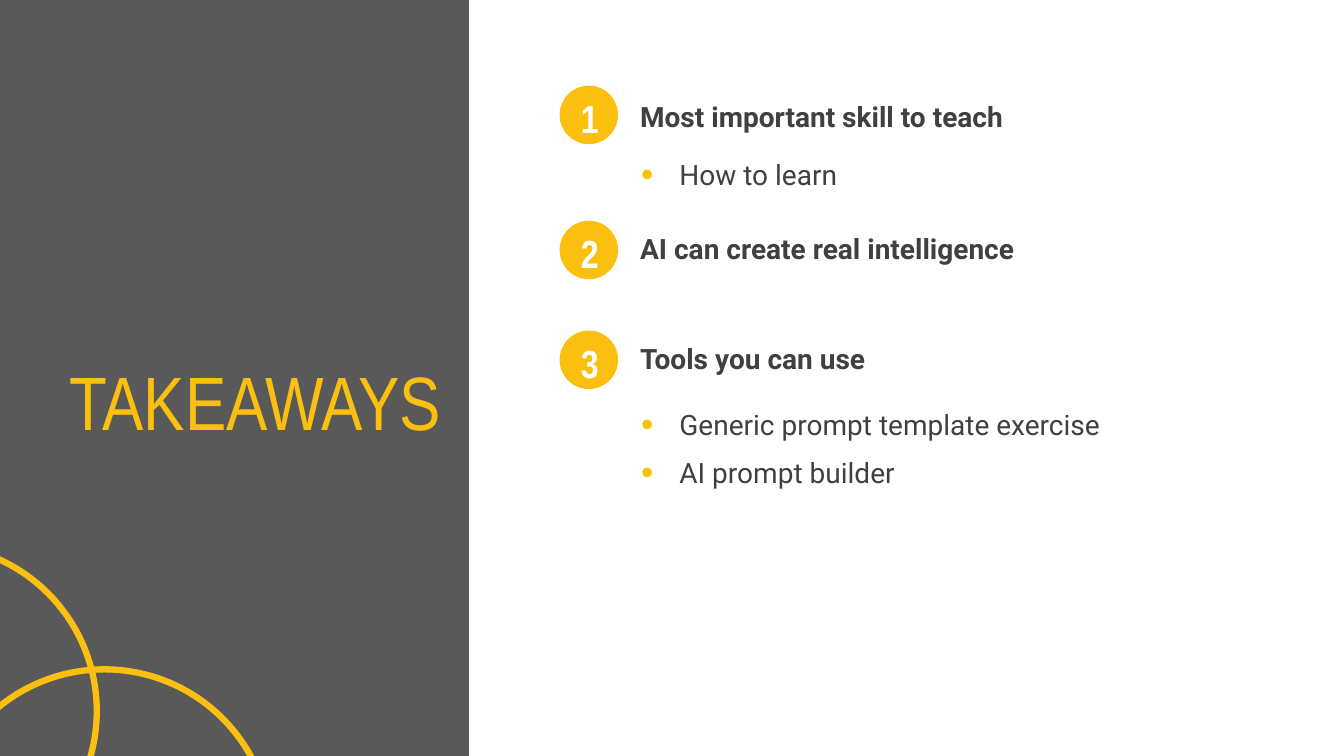
from dataclasses import dataclass

from lxml.etree import SubElement
from pptx import Presentation
from pptx.dml.color import RGBColor
from pptx.enum.shapes import MSO_SHAPE
from pptx.enum.text import MSO_AUTO_SIZE, PP_ALIGN
from pptx.oxml.ns import qn
from pptx.shapes.autoshape import Shape
from pptx.slide import Slide
from pptx.util import Inches, Pt


@dataclass(frozen=True)
class Theme:
    panel: RGBColor = RGBColor(0x59, 0x59, 0x59)
    gold: RGBColor = RGBColor(0xFB, 0xBF, 0x10)
    bullet: RGBColor = RGBColor(0xFF, 0xC0, 0x00)
    body: RGBColor = RGBColor(0x40, 0x40, 0x40)
    white: RGBColor = RGBColor(0xFF, 0xFF, 0xFF)
    display_font: str = "Arial Narrow"
    body_font: str = "Roboto"
    title_size: int = 54
    number_size: int = 28
    body_size: int = 20
    ring_width: float = 4.5


@dataclass(frozen=True)
class Point:
    text: str
    top: float


@dataclass(frozen=True)
class Takeaway:
    heading: Point
    badge_top: float
    details: tuple[Point, ...] = ()


@dataclass(frozen=True)
class Ring:
    left: float
    top: float


THEME = Theme()
BADGE_LEFT, BADGE_SIZE = 5.55, 0.58
HEADING_LEFT, DETAIL_LEFT = 6.25, 6.26
LINE_WIDTH, LINE_HEIGHT = 6.51, 0.44
BULLET_INDENT = 0.38
RING_SIZE = 3.31

TAKEAWAYS = (
    Takeaway(Point("Most important skill to teach", 0.94), 0.85,
             (Point("How to learn", 1.51),)),
    Takeaway(Point("AI can create real intelligence", 2.25), 2.19),
    Takeaway(Point("Tools you can use", 3.34), 3.28,
             (Point("Generic prompt template exercise", 3.99),
              Point("AI prompt builder", 4.47))),
)
RINGS = (Ring(-2.35, 5.4), Ring(-0.62, 6.64))


def add_figure(slide: Slide, kind: MSO_SHAPE, left: float, top: float,
               width: float, height: float, *, fill: RGBColor | None = None,
               line: RGBColor | None = None) -> Shape:
    figure = slide.shapes.add_shape(
        kind, Inches(left), Inches(top), Inches(width), Inches(height))
    figure.shadow.inherit = False
    if fill is None:
        figure.fill.background()
    else:
        figure.fill.solid()
        figure.fill.fore_color.rgb = fill
    if line is None:
        figure.line.fill.background()
    else:
        figure.line.color.rgb = line
        figure.line.width = Pt(THEME.ring_width)
    return figure


def add_text(slide: Slide, text: str, left: float, top: float,
             width: float = LINE_WIDTH, height: float = LINE_HEIGHT, *,
             font: str = THEME.body_font, size: int = THEME.body_size,
             color: RGBColor = THEME.body, bold: bool = False,
             align: PP_ALIGN = PP_ALIGN.LEFT, bulleted: bool = False) -> None:
    frame = slide.shapes.add_textbox(
        Inches(left), Inches(top), Inches(width), Inches(height)).text_frame
    frame.word_wrap = True
    frame.auto_size = MSO_AUTO_SIZE.SHAPE_TO_FIT_TEXT
    paragraph = frame.paragraphs[0]
    paragraph.alignment = align
    if bulleted:
        properties = paragraph._p.get_or_add_pPr()
        properties.set("marL", str(Inches(BULLET_INDENT)))
        properties.set("indent", str(-Inches(BULLET_INDENT)))
        bullet_color = SubElement(properties, qn("a:buClr"))
        SubElement(bullet_color, qn("a:srgbClr"), val=str(THEME.bullet))
        SubElement(properties, qn("a:buSzPct"), val="125000")
        SubElement(properties, qn("a:buFont"), typeface="Arial")
        SubElement(properties, qn("a:buChar"), char="•")
    run = paragraph.add_run()
    run.text = text
    run.font.name = font
    run.font.size = Pt(size)
    run.font.color.rgb = color
    run.font.bold = bold


def add_takeaway(slide: Slide, number: int, takeaway: Takeaway) -> None:
    add_text(slide, takeaway.heading.text, HEADING_LEFT, takeaway.heading.top,
             bold=True)
    add_figure(slide, MSO_SHAPE.OVAL, BADGE_LEFT, takeaway.badge_top,
               BADGE_SIZE, BADGE_SIZE, fill=THEME.gold)
    add_text(slide, str(number), BADGE_LEFT + 0.01, takeaway.badge_top + 0.04,
             BADGE_SIZE, 0.57, font=THEME.display_font, size=THEME.number_size,
             color=THEME.white, bold=True, align=PP_ALIGN.CENTER)
    for detail in takeaway.details:
        add_text(slide, detail.text, DETAIL_LEFT, detail.top, bulleted=True)


def main() -> None:
    presentation = Presentation()
    presentation.slide_width = Inches(13.33)
    presentation.slide_height = Inches(7.5)
    slide = presentation.slides.add_slide(presentation.slide_layouts[6])

    add_figure(slide, MSO_SHAPE.RECTANGLE, 0, 0, 4.65, 7.5, fill=THEME.panel)
    for ring in RINGS:
        add_figure(slide, MSO_SHAPE.OVAL, ring.left, ring.top,
                   RING_SIZE, RING_SIZE, line=THEME.gold)
    add_text(slide, "TAKEAWAYS", 0.59, 3.47, 5.57, 1.01,
             font=THEME.display_font, size=THEME.title_size, color=THEME.gold)
    for number, takeaway in enumerate(TAKEAWAYS, start=1):
        add_takeaway(slide, number, takeaway)

    presentation.save("out.pptx")


if __name__ == "__main__":
    main()
